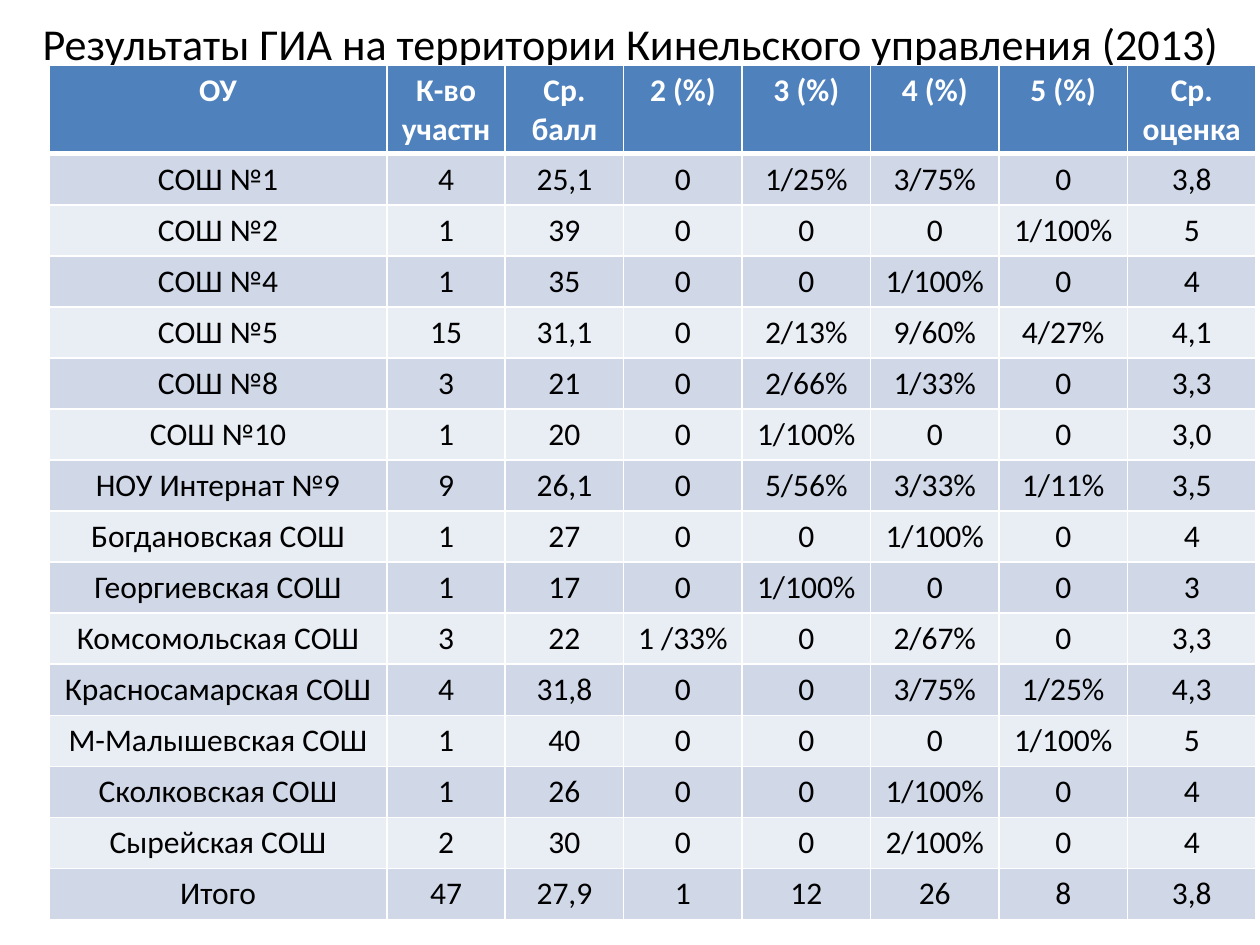
from dataclasses import dataclass

from lxml import etree
from pptx import Presentation
from pptx import util as u
from pptx.dml.color import RGBColor
from pptx.enum import text
from pptx.oxml import ns


@dataclass(frozen=True)
class Theme:
    font: str = "Calibri"
    ink: str = "000000"
    paper: str = "FFFFFF"
    header: str = "4F81BD"
    bands: tuple = ("D0D8E8", "E9EDF4")
    title_size: float = 25.2
    table_size: float = 18
    thin: float = 1
    thick: float = 3


TITLE = "Результаты ГИА на территории Кинельского управления (2013)"
HEADINGS = ("ОУ", "К-во участн", "Ср. балл", "2 (%)", "3 (%)", "4 (%)", "5 (%)", "Ср. оценка")
RESULTS = (
    ("СОШ №1", "4", "25,1", "0", "1/25%", "3/75%", "0", "3,8"),
    ("СОШ №2", "1", "39", "0", "0", "0", "1/100%", "5"),
    ("СОШ №4", "1", "35", "0", "0", "1/100%", "0", "4"),
    ("СОШ №5", "15", "31,1", "0", "2/13%", "9/60%", "4/27%", "4,1"),
    ("СОШ №8", "3", "21", "0", "2/66%", "1/33%", "0", "3,3"),
    ("СОШ №10", "1", "20", "0", "1/100%", "0", "0", "3,0"),
    ("НОУ Интернат №9", "9", "26,1", "0", "5/56%", "3/33%", "1/11%", "3,5"),
    ("Богдановская СОШ", "1", "27", "0", "0", "1/100%", "0", "4"),
    ("Георгиевская СОШ", "1", "17", "0", "1/100%", "0", "0", "3"),
    ("Комсомольская СОШ", "3", "22", "1 /33%", "0", "2/67%", "0", "3,3"),
    ("Красносамарская СОШ", "4", "31,8", "0", "0", "3/75%", "1/25%", "4,3"),
    ("М-Малышевская СОШ", "1", "40", "0", "0", "0", "1/100%", "5"),
    ("Сколковская СОШ", "1", "26", "0", "0", "1/100%", "0", "4"),
    ("Сырейская СОШ", "2", "30", "0", "0", "2/100%", "0", "4"),
    ("Итого", "47", "27,9", "1", "12", "26", "8", "3,8"),
)
COLUMN_WIDTHS = [2.68] + [0.94] * 3 + [1.02] * 4
HEADER_HEIGHT = 0.7
BODY_HEIGHT = 6.08


class SlideBuilder:
    def __init__(self, page, theme):
        self.page = page
        self.theme = theme

    def add_span(self, para, words, size, color, bold=False):
        para.alignment = text.PP_ALIGN.CENTER
        span = para.add_run()
        span.text = words
        span.font.name = self.theme.font
        span.font.size = u.Pt(size)
        span.font.bold = bold
        span.font.color.rgb = RGBColor.from_string(color)

    def title(self, words, left, top, width, height):
        box = self.page.shapes.add_textbox(*map(u.Inches, (left, top, width, height)))
        frame = box.text_frame
        frame.word_wrap = True
        frame.vertical_anchor = text.MSO_ANCHOR.MIDDLE
        self.add_span(frame.paragraphs[0], words, self.theme.title_size, self.theme.ink)

    def border(self, cell, side, width):
        properties = cell._tc.get_or_add_tcPr()
        line = etree.SubElement(properties, ns.qn(f"a:ln{side}"), w=str(u.Pt(width)))
        fill = etree.SubElement(line, ns.qn("a:solidFill"))
        etree.SubElement(fill, ns.qn("a:srgbClr"), val=self.theme.paper)

    def cell(self, cell, words, row):
        theme = self.theme
        heading = row == 0
        thick_side = {0: "B", 1: "T"}.get(row)
        for side in "LRTB":
            self.border(cell, side, theme.thick if side == thick_side else theme.thin)
        cell.fill.solid()
        fill = theme.header if heading else theme.bands[(row - 1) % 2]
        cell.fill.fore_color.rgb = RGBColor.from_string(fill)
        color = theme.paper if heading else theme.ink
        self.add_span(cell.text_frame.paragraphs[0], words, theme.table_size, color, heading)

    def table(self, records, left, top, widths, header_height, body_height):
        area = (left, top, sum(widths), header_height + body_height)
        shape = self.page.shapes.add_table(len(records), len(widths), *map(u.Inches, area))
        table = shape.table
        for column, width in zip(table.columns, widths):
            column.width = u.Inches(width)
        for index, record in enumerate(records):
            height = body_height / (len(records) - 1) if index else header_height
            table.rows[index].height = u.Inches(height)
            for cell, words in zip(table.rows[index].cells, record):
                self.cell(cell, words, index)


def main():
    deck = Presentation()
    deck.slide_width, deck.slide_height = u.Inches(10), u.Inches(7.5)
    page = deck.slides.add_slide(deck.slide_layouts[6])
    builder = SlideBuilder(page, Theme())
    builder.title(TITLE, 0.2, 0, 9.61, 0.68)
    builder.table((HEADINGS,) + RESULTS, 0.39, 0.52, COLUMN_WIDTHS, HEADER_HEIGHT, BODY_HEIGHT)
    deck.save("out.pptx")


if __name__ == "__main__":
    main()
